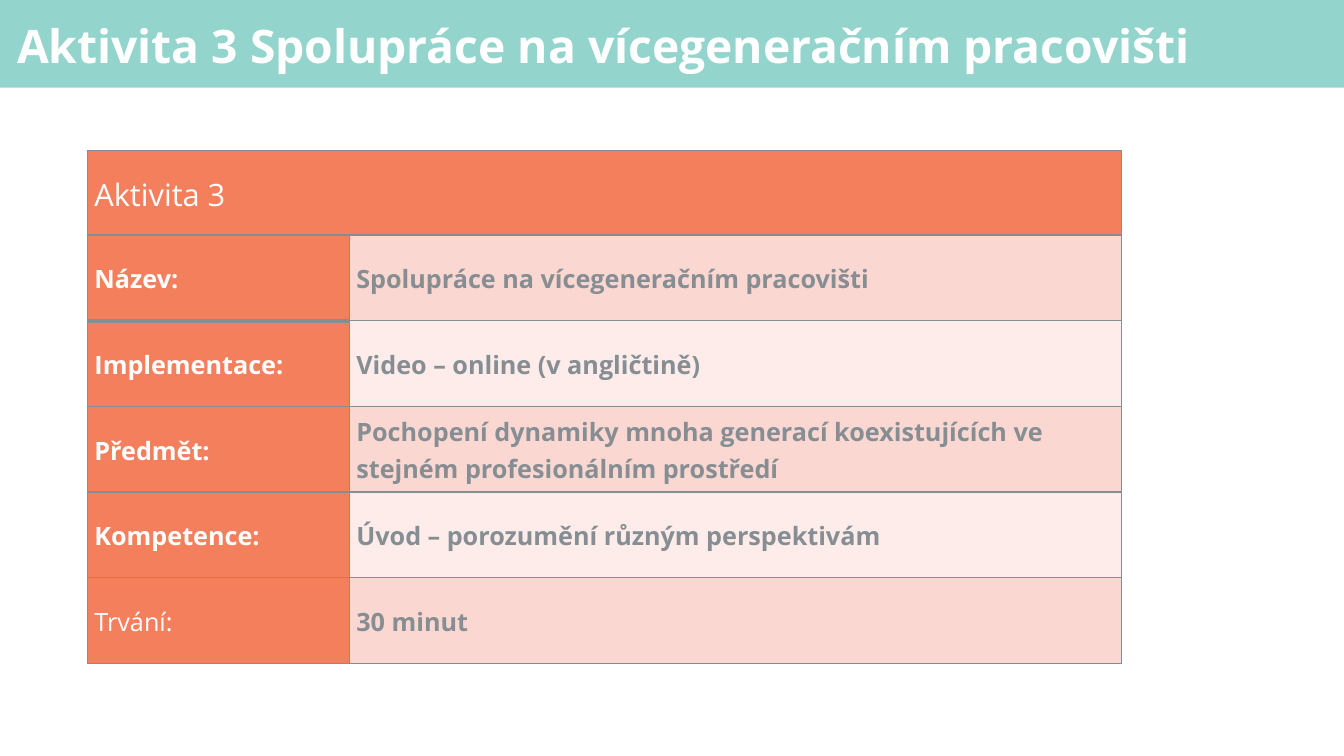
from lxml import etree
from pptx import Presentation
from pptx.dml.color import RGBColor
from pptx.enum import shapes, text
from pptx.oxml import ns
from pptx.util import Cm, Pt

TEAL, ORANGE, GREY, WHITE = "93D4CC", "F47F5D", "868E93", "FFFFFF"
BANDS = ("FBD7D1", "FDECE9")
ROWS = [
    ("Aktivita 3", ""),
    ("Název:", "Spolupráce na vícegeneračním pracovišti"),
    ("Implementace:", "Video – online (v angličtině)"),
    ("Předmět:", "Pochopení dynamiky mnoha generací koexistujících ve "
                 "stejném profesionálním prostředí"),
    ("Kompetence:", "Úvod – porozumění různým perspektivám"),
    ("Trvání:", "30 minut"),
]


def color(value):
    return RGBColor.from_string(value)


def write(para, words, spacing, size, bold, ink):
    para.line_spacing = spacing
    span = para.add_run()
    span.text = words
    for name, value in {"name": "Open Sans", "size": Pt(size), "bold": bold}.items():
        setattr(span.font, name, value)
    span.font.color.rgb = color(ink)


deck = Presentation()
deck.slide_width, deck.slide_height = Cm(33.87), Cm(19.05)
page = deck.slides.add_slide(deck.slide_layouts[6])

# Title band
band = page.shapes.add_shape(shapes.MSO_SHAPE.RECTANGLE, 0, 0, deck.slide_width, Cm(2.21))
band.shadow.inherit = False
band.fill.solid()
band.fill.fore_color.rgb = color(TEAL)
band.line.fill.background()

title = page.shapes.add_textbox(Cm(0.28), Cm(0.23), Cm(33.17), Cm(1.98))
frame = title.text_frame
frame.word_wrap = True
frame.vertical_anchor = text.MSO_ANCHOR.MIDDLE
for side in ("left", "right", "top", "bottom"):
    setattr(frame, f"margin_{side}", Cm(0.15))
write(frame.paragraphs[0], "Aktivita 3 Spolupráce na vícegeneračním pracovišti",
      0.9, 33, True, WHITE)

# Activity table
holder = page.shapes.add_table(len(ROWS), 2, Cm(2.2), Cm(3.79), Cm(26.06), Cm(12.93))
table = holder.table
table.first_row = table.horz_banding = False
table.columns[0].width, table.columns[1].width = Cm(6.6), Cm(19.46)

for r, labels in enumerate(ROWS):
    table.rows[r].height = Cm(2.13 if r == 0 else 2.16)
    for c, words in enumerate(labels):
        cell = table.cell(r, c)
        cell.vertical_anchor = text.MSO_ANCHOR.MIDDLE
        cell.margin_left = cell.margin_right = Cm(0.18)
        cell.margin_top = cell.margin_bottom = 0

        # The rule under the first label is heavier than the rest
        heavy = {(1, 0): "B", (2, 0): "T"}.get((r, c))
        properties = cell._tc.get_or_add_tcPr()
        for side in "LRTB":
            width = Pt(3 if side == heavy else 1)
            edge = etree.SubElement(properties, ns.qn(f"a:ln{side}"), w=str(width))
            fill = etree.SubElement(edge, ns.qn("a:solidFill"))
            etree.SubElement(fill, ns.qn("a:srgbClr"), val=GREY)

        is_label = c == 0 or r == 0
        cell.fill.solid()
        cell.fill.fore_color.rgb = color(ORANGE if is_label else BANDS[(r - 1) % 2])
        if words:
            bold = c == 1 or 0 < r < len(ROWS) - 1
            write(cell.text_frame.paragraphs[0], words, 1.07,
                  22 if r == 0 else 18, bold, WHITE if is_label else GREY)

table.cell(0, 0).merge(table.cell(0, 1))

deck.save("out.pptx")
